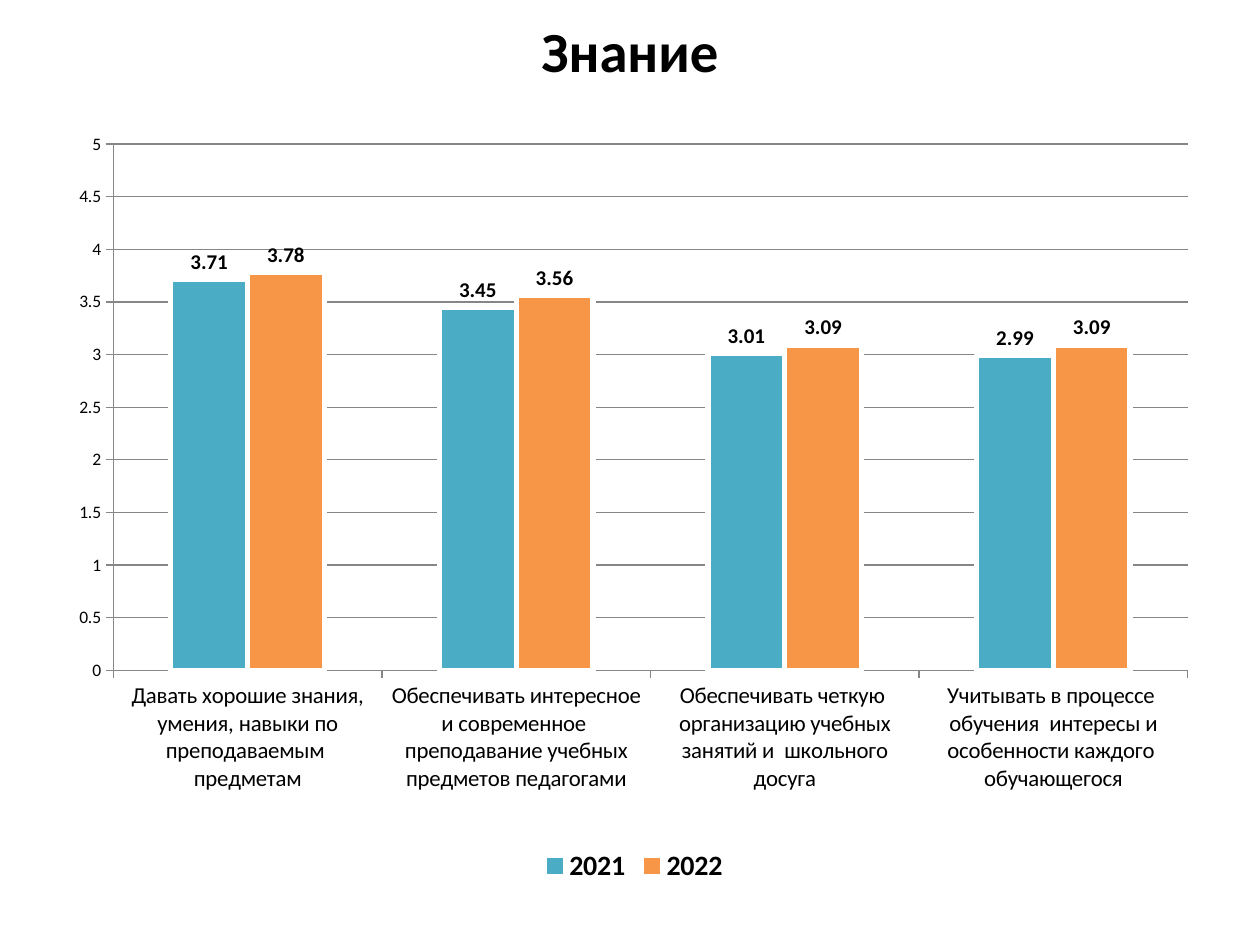
import pptx
import pptx.chart.data
import pptx.dml.color
import pptx.enum.chart
import pptx.enum.text
import pptx.oxml
import pptx.oxml.ns
import pptx.util

EMU_PER_PX = 914400 / 126
TITLE_ONLY = 5
CATEGORIES = [
    "Давать хорошие знания, умения, навыки по преподаваемым  предметам",
    "Обеспечивать интересное и современное  преподавание учебных предметов педагогами",
    "Обеспечивать четкую  организацию учебных занятий и  школьного досуга",
    "Учитывать в процессе  обучения  интересы и особенности каждого  обучающегося",
]
SERIES = [
    ("2021", [3.71, 3.45, 3.01, 2.99], "4BACC6"),
    ("2022", [3.78, 3.56, 3.09, 3.09], "F79646"),
]


def px(length):
    return pptx.util.Emu(round(length * EMU_PER_PX))


def color(hex_string):
    return pptx.dml.color.RGBColor.from_string(hex_string)


class SlideBuilder:
    font_name = "Calibri"
    text_color = "000000"
    grid_color = "868686"

    def __init__(self, slide):
        self.slide = slide

    def style_font(self, font, size, bold=False):
        font.name = self.font_name
        font.size = pptx.util.Pt(size)
        font.bold = bold
        font.color.rgb = color(self.text_color)

    def style_line(self, line, hex_string, width):
        line.color.rgb = color(hex_string)
        line.width = pptx.util.Pt(width)

    def title(self, text, left, top, width, height, size):
        box = self.slide.shapes.title
        box.left, box.top, box.width, box.height = map(px, (left, top, width, height))
        frame = box.text_frame
        frame.text = text
        frame.vertical_anchor = pptx.enum.text.MSO_ANCHOR.MIDDLE
        para = frame.paragraphs[0]
        para.alignment = pptx.enum.text.PP_ALIGN.CENTER
        self.style_font(para.runs[0].font, size, bold=True)

    def column_chart(self, categories, series, left, top, width, height):
        data = pptx.chart.data.CategoryChartData()
        data.categories = categories
        for name, values, _ in series:
            data.add_series(name, values)
        chart = self.slide.shapes.add_chart(
            pptx.enum.chart.XL_CHART_TYPE.COLUMN_CLUSTERED,
            *map(px, (left, top, width, height)), data).chart
        chart.has_title = False
        self.style_font(chart.font, 10)

        plot = chart.plots[0]
        plot.gap_width = 150
        plot.overlap = 0
        plot.vary_by_categories = False
        for columns, (_, _, fill) in zip(plot.series, series):
            columns.format.fill.solid()
            columns.format.fill.fore_color.rgb = color(fill)
            self.style_line(columns.format.line, "FFFFFF", 3)
            labels = columns.data_labels
            labels.show_value = True
            labels.position = pptx.enum.chart.XL_LABEL_POSITION.OUTSIDE_END
            self.style_font(labels.font, 12, bold=True)
        return chart

    def axes(self, chart, maximum, step):
        chart.value_axis.minimum_scale = 0
        chart.value_axis.maximum_scale = maximum
        chart.value_axis.major_unit = step
        chart.value_axis.has_major_gridlines = True
        self.style_line(chart.value_axis.major_gridlines.format.line, self.grid_color, 0.75)
        for axis, size in ((chart.category_axis, 13), (chart.value_axis, 10)):
            axis.major_tick_mark = pptx.enum.chart.XL_TICK_MARK.OUTSIDE
            axis.minor_tick_mark = pptx.enum.chart.XL_TICK_MARK.NONE
            self.style_line(axis.format.line, self.grid_color, 0.75)
            self.style_font(axis.tick_labels.font, size)

    def legend(self, chart, size):
        chart.has_legend = True
        chart.legend.position = pptx.enum.chart.XL_LEGEND_POSITION.BOTTOM
        chart.legend.include_in_layout = False
        self.style_font(chart.legend.font, size, bold=True)

    def plot_layout(self, chart, x, y, w, h):
        """Fix the inner plot area, in fractions of the chart."""
        plot_area = chart.element.xpath("c:chart/c:plotArea")[0]
        for old in plot_area.xpath("c:layout"):
            plot_area.remove(old)
        parts = [("layoutTarget", "inner"), ("xMode", "edge"), ("yMode", "edge"),
                 ("x", x), ("y", y), ("w", w), ("h", h)]
        settings = "".join(f'<c:{tag} val="{value}"/>' for tag, value in parts)
        plot_area.insert(0, pptx.oxml.parse_xml(
            f'<c:layout {pptx.oxml.ns.nsdecls("c")}>'
            f"<c:manualLayout>{settings}</c:manualLayout></c:layout>"))


def main():
    deck = pptx.Presentation()
    deck.slide_width, deck.slide_height = px(1260), px(945)
    page = SlideBuilder(deck.slides.add_slide(deck.slide_layouts[TITLE_ONLY]))
    page.title("Знание", 63, 6, 1134, 87, 32.4)
    chart = page.column_chart(CATEGORIES, SERIES, 63, 125, 1143, 764)
    page.axes(chart, maximum=5, step=0.5)
    page.legend(chart, 16)
    page.plot_layout(chart, 0.044, 0.025, 0.94, 0.689)
    deck.save("out.pptx")


if __name__ == "__main__":
    main()
